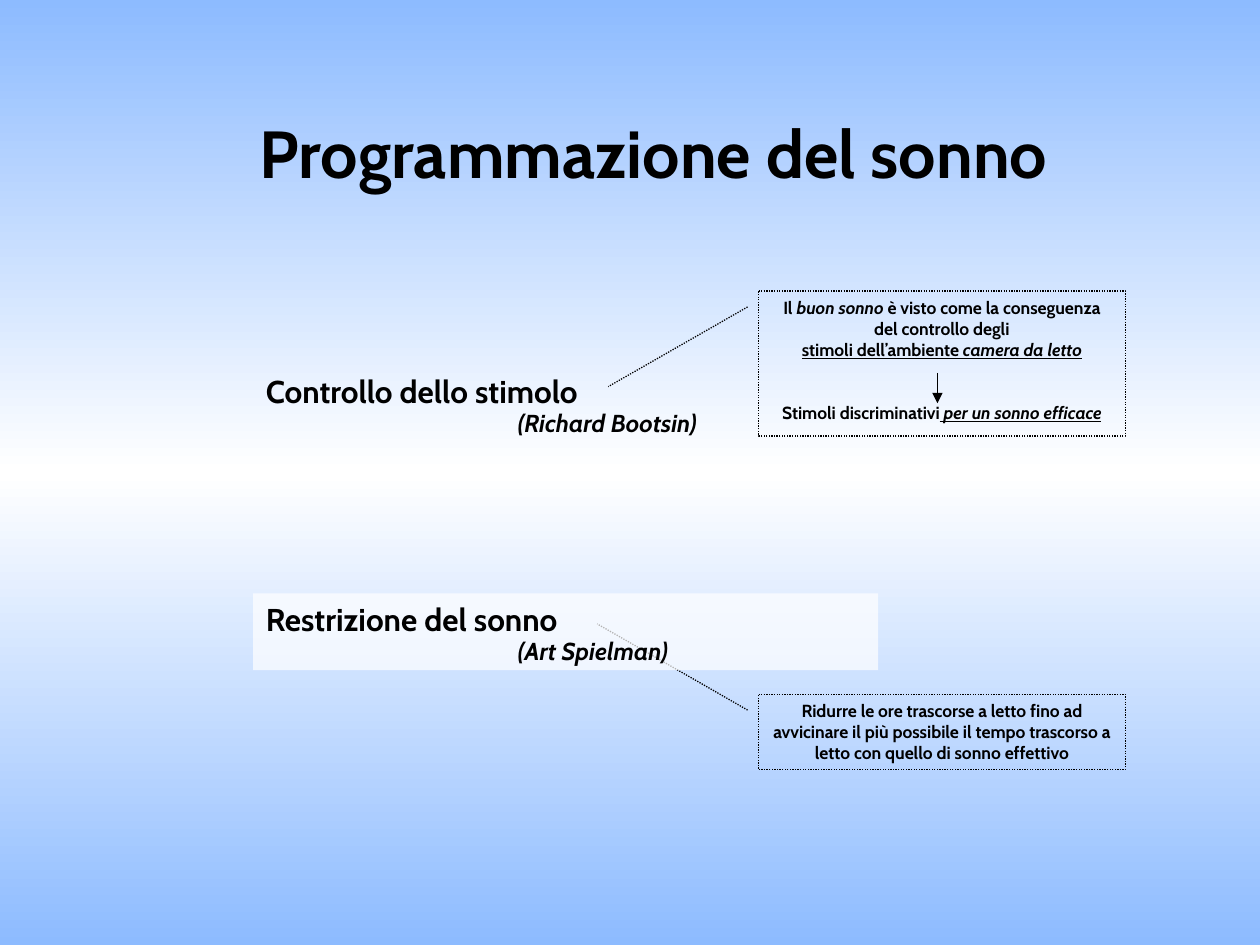
"""Build the slide on sleep scheduling with two techniques and their callouts."""
from copy import deepcopy
from dataclasses import dataclass

from lxml.etree import SubElement
from pptx import Presentation
from pptx.dml.color import RGBColor
from pptx.enum.dml import MSO_LINE
from pptx.enum.shapes import MSO_CONNECTOR, MSO_SHAPE
from pptx.enum.text import MSO_ANCHOR, MSO_AUTO_SIZE, PP_ALIGN
from pptx.oxml.ns import qn
from pptx.util import Inches, Length, Pt

BLACK = RGBColor(0, 0, 0)
WHITE = RGBColor(255, 255, 255)
SKY = RGBColor(0x8D, 0xBB, 0xFF)
FONT = "Cabin"
COLUMNS, ROWS = 100, 75
HEADING_LEFT, HEADING_WIDTH, HEADING_HEIGHT = 20.1, 49.6, 6.1
CALLOUT_LEFT, CALLOUT_WIDTH = 60.2, 29.1


@dataclass(frozen=True)
class Words:
    text: str
    italic: bool = False
    underline: bool = False


@dataclass(frozen=True)
class Line:
    words: tuple[Words, ...]
    space_before: int = 0


@dataclass(frozen=True)
class Technique:
    name: str
    author: str
    row: float
    callout_row: float
    callout_height: float
    pointer: tuple[float, ...]
    lines: tuple[Line, ...]
    opacity: int = 0


TECHNIQUES = (
    Technique(
        "Controllo dello stimolo", "(Richard Bootsin)", 29, 23.1, 11.5,
        (0.11, -0.03, 0.66, -0.41),
        (
            Line((Words("Il "), Words("buon sonno ", italic=True),
                  Words("è visto come la conseguenza del controllo degli"))),
            Line((Words("stimoli dell’ambiente ", underline=True),
                  Words("camera da letto", italic=True, underline=True))),
            Line((Words("Stimoli discriminativi"),
                  Words(" per un sonno efficace", italic=True, underline=True)), 24),
        ),
    ),
    Technique(
        "Restrizione del sonno", "(Art Spielman)", 47.1, 55.1, 6,
        (0.21, -0.03, -0.93, -0.44),
        (Line((Words("Ridurre le ore trascorse a letto fino ad avvicinare il più possibile "
                     "il tempo trascorso a letto con quello di sonno effettivo"),)),),
        opacity=70,
    ),
)


def grid(*cells: float) -> list[Length]:
    """Turn grid cells of a tenth of an inch into lengths."""
    return [Inches(cell / 10) for cell in cells]


def place(shape, left: float, top: float, width: float, height: float) -> None:
    """Move a shape to its cells on the grid."""
    shape.left, shape.top, shape.width, shape.height = grid(left, top, width, height)


def write(paragraph, text: str, *, size: float, italic: bool = False,
          underline: bool = False) -> None:
    """Add a bold black run to a paragraph."""
    run = paragraph.add_run()
    run.text = text
    font = run.font
    font.name, font.size, font.bold = FONT, Pt(size), True
    font.italic, font.underline = italic, underline
    font.color.rgb = BLACK


def paint_background(slide) -> None:
    """Fill the background with blue fading to white in the middle."""
    fill = slide.background.fill
    fill.gradient()
    fill.gradient_angle = 90
    first = fill.gradient_stops[0]._gs
    first.addnext(deepcopy(first))
    for stop, position, color in zip(fill.gradient_stops, (0, 0.5, 1), (SKY, WHITE, SKY)):
        stop.position, stop.color.rgb = position, color


def draw_title(slide, text: str) -> None:
    """Place and write the title."""
    title = slide.shapes.title
    place(title, 19.6, 8.4, 65.8, 7.4)
    frame = title.text_frame
    frame.auto_size, frame.word_wrap = MSO_AUTO_SIZE.NONE, False
    frame.vertical_anchor = MSO_ANCHOR.TOP
    frame.paragraphs[0].alignment = PP_ALIGN.LEFT
    write(frame.paragraphs[0], text, size=38)


def draw_callout(slide, technique: Technique) -> None:
    """Draw the dotted callout that explains a technique."""
    callout = slide.shapes.add_shape(MSO_SHAPE.LINE_CALLOUT_1, 0, 0, 0, 0)
    place(callout, CALLOUT_LEFT, technique.callout_row, CALLOUT_WIDTH, technique.callout_height)
    for index, value in enumerate(technique.pointer):
        callout.adjustments[index] = value
    callout.shadow.inherit = False
    callout.fill.background()
    callout.line.color.rgb, callout.line.width = BLACK, Pt(0.75)
    callout.line.dash_style = MSO_LINE.ROUND_DOT
    frame = callout.text_frame
    frame.vertical_anchor = MSO_ANCHOR.TOP
    for index, line in enumerate(technique.lines):
        paragraph = frame.add_paragraph() if index else frame.paragraphs[0]
        paragraph.alignment = PP_ALIGN.CENTER
        paragraph.space_before = Pt(line.space_before)
        for words in line.words:
            write(paragraph, words.text, size=10, italic=words.italic, underline=words.underline)


def draw_heading(slide, body, technique: Technique) -> None:
    """Write a technique and its author in a body placeholder, in front of its callout."""
    place(body, HEADING_LEFT, technique.row, HEADING_WIDTH, HEADING_HEIGHT)
    slide.shapes._spTree.append(body._element)
    if technique.opacity:
        body.fill.solid()
        body.fill.fore_color.rgb = WHITE
        color = body._element.spPr.find(f"{qn('a:solidFill')}/{qn('a:srgbClr')}")
        SubElement(color, qn("a:alpha"), val=str(technique.opacity * 1000))
    frame = body.text_frame
    frame.auto_size = MSO_AUTO_SIZE.NONE
    name, author = frame.paragraphs[0], frame.add_paragraph()
    name.space_before, author.space_before = Pt(0), Pt(8)
    author.line_spacing = 0.4
    for paragraph, indent in ((name, 0), (author, 2)):
        properties = paragraph._p.get_or_add_pPr()
        properties.set("marL", str(Inches(indent)))
        properties.set("indent", "0")
        SubElement(properties, qn("a:buNone"))
    write(name, technique.name, size=18)
    write(author, technique.author, size=14, italic=True)


def draw_arrow(slide, column: float, top: float, bottom: float) -> None:
    """Draw a vertical arrow pointing down."""
    arrow = slide.shapes.add_connector(MSO_CONNECTOR.STRAIGHT, *grid(column, top, column, bottom))
    arrow.line.color.rgb, arrow.line.width = BLACK, Pt(0.75)
    SubElement(arrow.line._get_or_add_ln(), qn("a:tailEnd"), type="triangle")
    SubElement(arrow._element.spPr, qn("a:effectLst"))


def main() -> None:
    """Build and save the presentation."""
    presentation = Presentation()
    presentation.slide_width, presentation.slide_height = grid(COLUMNS, ROWS)
    slide = presentation.slides.add_slide(presentation.slide_layouts.get_by_name("Two Content"))
    paint_background(slide)
    draw_title(slide, "Programmazione del sonno")
    bodies = list(slide.placeholders)[1:]
    for body, technique in zip(bodies, TECHNIQUES):
        draw_callout(slide, technique)
        draw_heading(slide, body, technique)
    draw_arrow(slide, 74.4, 29.6, 32)
    presentation.save("out.pptx")


if __name__ == "__main__":
    main()
